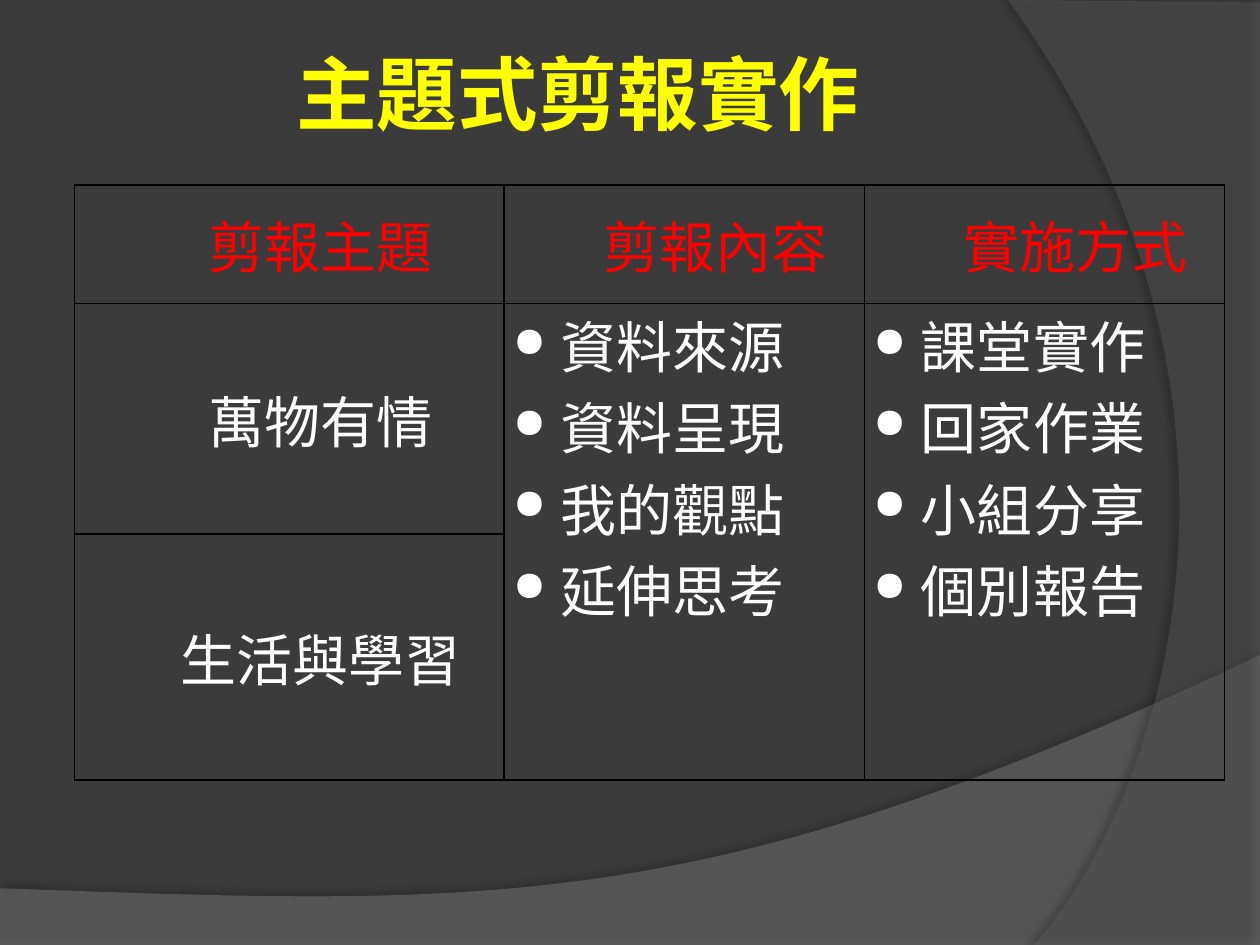
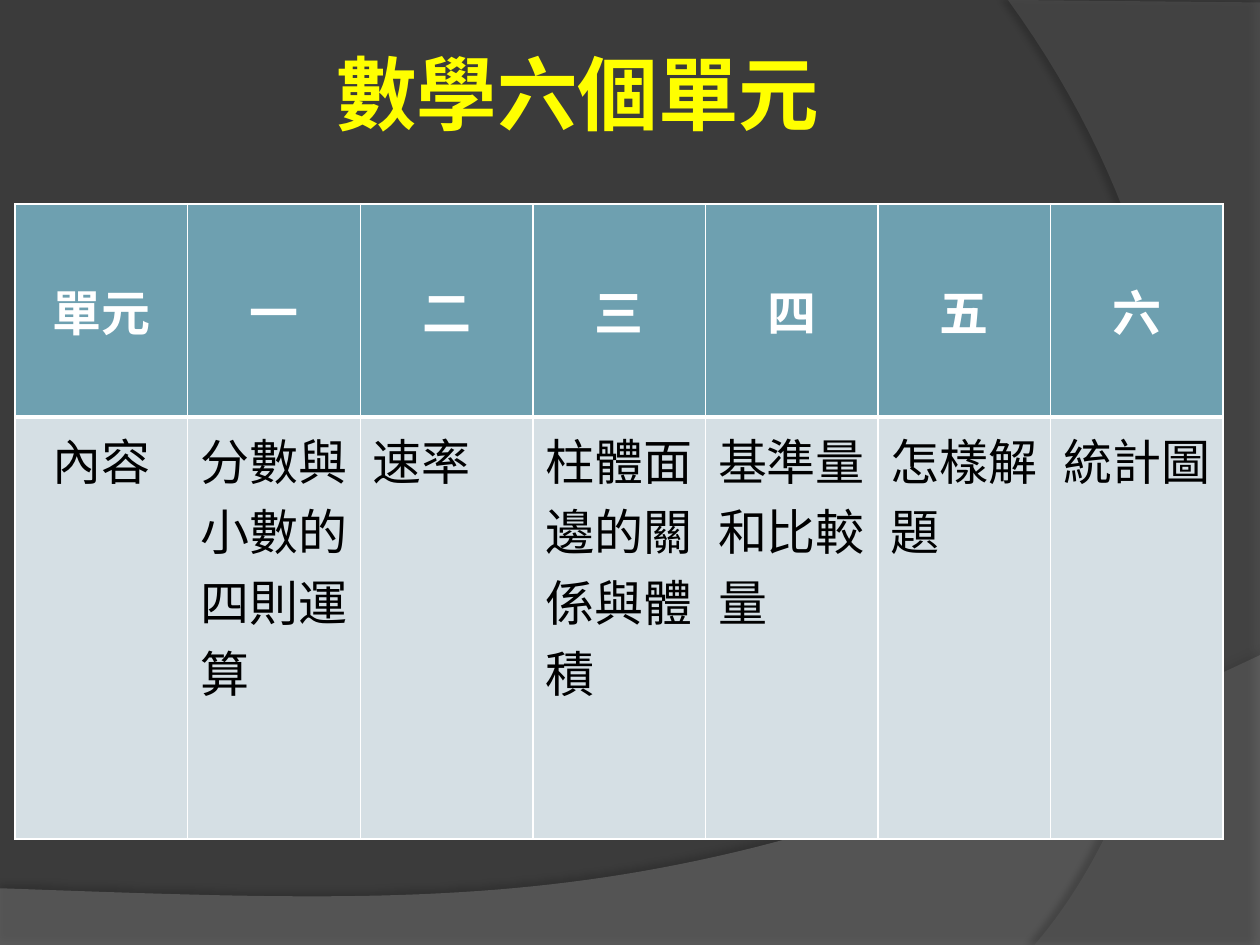
"""Builds two dark slides, each with a yellow title and a table."""
from pptx import Presentation
from pptx.dml.color import RGBColor
from pptx.enum.text import MSO_ANCHOR as Anchor, PP_ALIGN as Align
from pptx.oxml.ns import qn
from pptx.util import Inches, Pt
from lxml.etree import SubElement as Sub

BACK, TITLE = "3B3B3B", "FFFF00"
RED, WHITE, BLACK = "FF0000", "FFFFFF", "000000"
TEAL, PALE = "6EA0B0", "D5DFE4"

BANDS = [
    dict(color="7F7F7F", alpha=45, shade=(35, 4, 3.5, 270),
         start=(0, 7.5), lines=[(10, 7.5), (10, 5.2)],
         curve=[(5.59, 7.29), (3.91, 7.19), (0, 7.05)]),
    dict(color="5E5E5E", alpha=40, shade=(45, 4, 4, 180),
         start=(10, 0.02), lines=[(10, 7.5), (8.21, 7.5)],
         curve=[(9.35, 6.19), (10.18, 3), (8, 0)]),
]

PLAN = dict(
    title="主題式剪報實作",
    heads=["剪報主題", "剪報內容", "實施方式"],
    topics=["萬物有情", "生活與學習"],
    lists=[["資料來源", "資料呈現", "我的觀點", "延伸思考"],
           ["課堂實作", "回家作業", "小組分享", "個別報告"]],
)

UNITS = dict(
    title="數學六個單元",
    heads=["單元", "一", "二", "三", "四", "五", "六"],
    body=["內容", "分數與小數的四則運算", "速率", "柱體面邊的關係與體積",
          "基準量和比較量", "怎樣解題", "統計圖"],
)


def rgb(code):
    return RGBColor.from_string(code)


def write(frame, text, size, font, color, bold=False, align=Align.LEFT,
          left=0, hang=0, bullet=None):
    lines = [text] if isinstance(text, str) else text
    for i, line in enumerate(lines):
        para = frame.add_paragraph() if i else frame.paragraphs[0]
        para.alignment = align
        props = para._p.get_or_add_pPr()
        props.set("marL", str(Inches(left)))
        props.set("indent", str(Inches(-hang)))
        if bullet:
            Sub(props, qn("a:buSzPct"), val="75000")
            Sub(props, qn("a:buChar"), char=bullet)
        run = para.add_run()
        run.text = line
        run.font.size, run.font.name, run.font.bold = Pt(size), font, bold
        run.font.color.rgb = rgb(color)


def tint(parent, color, alpha):
    node = Sub(parent, qn("a:srgbClr"), val=color)
    Sub(node, qn("a:alpha"), val=str(alpha * 1000))


def bend(start, one, two, end, steps=60):
    for i in range(1, steps + 1):
        t = i / steps
        u = 1 - t
        yield tuple(u**3 * a + 3 * u * u * t * b + 3 * u * t * t * c + t**3 * d
                    for a, b, c, d in zip(start, one, two, end))


def draw_band(slide, color, alpha, shade, start, lines, curve):
    spots = [start, *lines, *bend(lines[-1], *curve)]
    first, *rest = [(Inches(x), Inches(y)) for x, y in spots]
    pen = slide.shapes.build_freeform(*first)
    pen.add_line_segments(rest, close=True)
    band = pen.convert_to_shape()
    band.line.fill.background()
    band.fill.solid()
    band.shadow.inherit = False
    props = band._element.spPr
    fill = props.find(qn("a:solidFill"))
    fill.clear()
    tint(fill, color, alpha)
    dark, blur, dist, angle = shade
    cast = Sub(props.find(qn("a:effectLst")), qn("a:outerShdw"),
               blurRad=str(Pt(blur)), dist=str(Pt(dist)),
               dir=str(angle * 60000), rotWithShape="0")
    tint(cast, BLACK, dark)


def add_page(deck, title):
    slide = deck.slides.add_slide(deck.slide_layouts[6])
    slide.background.fill.solid()
    slide.background.fill.fore_color.rgb = rgb(BACK)
    for band in BANDS:
        draw_band(slide, **band)
    box = slide.shapes.add_textbox(*map(Inches, (0.5, 0.3, 8.17, 1.25)))
    box.text_frame.word_wrap = True
    write(box.text_frame, title, 46, "Cabin", TITLE, bold=True,
          align=Align.CENTER)
    return slide


def add_grid(slide, left, top, cols, rows):
    area = map(Inches, (left, top, sum(cols), sum(rows)))
    grid = slide.shapes.add_table(len(rows), len(cols), *area).table
    grid.first_row = grid.horz_banding = False
    for col, width in zip(grid.columns, cols):
        col.width = Inches(width)
    for row, height in zip(grid.rows, rows):
        row.height = Inches(height)
    return grid


def dress(cell, edge, fill=None, middle=False, pad=None, thick=None):
    props = cell._tc.get_or_add_tcPr()
    for side in "LRTB":
        width = (thick or {}).get(side, 1)
        line = Sub(props, qn("a:ln" + side), w=str(Pt(width)))
        Sub(Sub(line, qn("a:solidFill")), qn("a:srgbClr"), val=edge)
    if fill:
        cell.fill.solid()
        cell.fill.fore_color.rgb = rgb(fill)
    else:
        cell.fill.background()
    cell.vertical_anchor = Anchor.MIDDLE if middle else Anchor.TOP
    if pad:
        cell.margin_left = cell.margin_right = Inches(pad)
        cell.margin_top = cell.margin_bottom = 0


def plan_page(deck):
    slide = add_page(deck, PLAN["title"])
    grid = add_grid(slide, 0.59, 1.47, [3.41, 2.86, 2.86], [0.94, 1.83, 1.95])
    for r in range(3):
        for c in range(3):
            dress(grid.cell(r, c), BLACK, middle=r == 0 or c == 0, pad=0.07)
    face = dict(size=32, font="Calibri")
    mid = dict(face, align=Align.CENTER, left=0.5)
    for c, head in enumerate(PLAN["heads"]):
        write(grid.cell(0, c).text_frame, head, color=RED, **mid)
    for r, topic in enumerate(PLAN["topics"], 1):
        write(grid.cell(r, 0).text_frame, topic, color=WHITE, **mid)
    for c, items in enumerate(PLAN["lists"], 1):
        grid.cell(1, c).merge(grid.cell(2, c))
        write(grid.cell(1, c).text_frame, items, color=WHITE, left=0.38,
              hang=0.38, bullet="●", **face)


def units_page(deck):
    slide = add_page(deck, UNITS["title"])
    grid = add_grid(slide, 0.12, 1.62, [1.37] * len(UNITS["heads"]),
                    [1.69, 3.35])
    face = dict(size=28, font="Arial")
    for c, (head, body) in enumerate(zip(UNITS["heads"], UNITS["body"])):
        top, low = grid.cell(0, c), grid.cell(1, c)
        dress(top, WHITE, fill=TEAL, middle=True, thick={"B": 3})
        dress(low, WHITE, fill=PALE, thick={"T": 3})
        write(top.text_frame, head, color=WHITE, bold=True,
              align=Align.CENTER, **face)
        write(low.text_frame, body, color=BLACK,
              align=Align.LEFT if c else Align.CENTER, **face)


def main():
    deck = Presentation()
    deck.slide_width, deck.slide_height = Inches(10), Inches(7.5)
    plan_page(deck)
    units_page(deck)
    deck.save("out.pptx")


if __name__ == "__main__":
    main()
